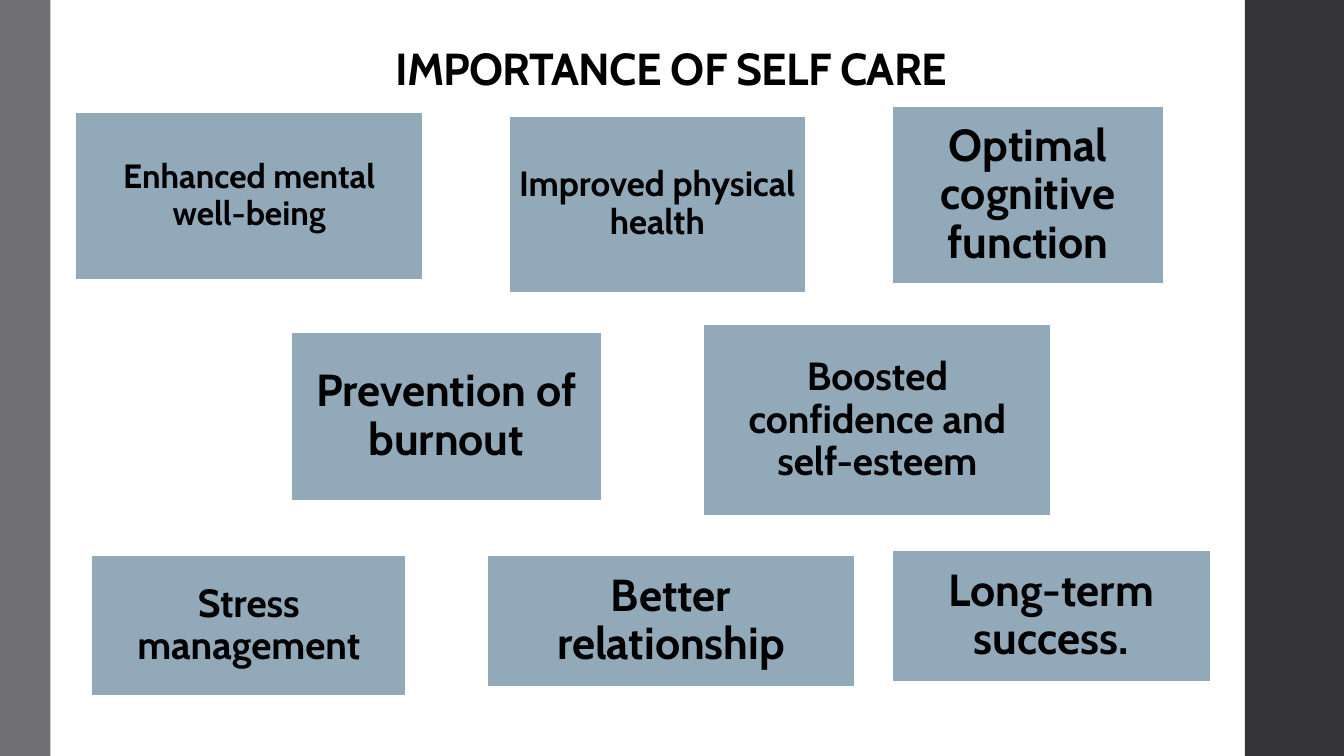
from dataclasses import dataclass

from pptx import Presentation
from pptx.dml.color import RGBColor
from pptx.enum.shapes import MSO_SHAPE as Shape
from pptx.enum.text import MSO_ANCHOR as Anchor, MSO_AUTO_SIZE as AutoSize, PP_ALIGN as Align
from pptx.util import Cm, Pt

PAGE_WIDTH, PAGE_HEIGHT = 33.87, 19.05


@dataclass(frozen=True)
class Theme:
    font: str = "Cabin"
    ink: str = "000000"
    paper: str = "FFFFFF"
    tile: str = "92A9B9"
    left_band: str = "6F6F74"
    right_band: str = "353537"
    small: float = 24
    medium: float = 25
    large: float = 28
    huge: float = 32
    outline: float = 1.1


class Page:
    def __init__(self, deck, theme):
        self.theme = theme
        self.slide = deck.slides.add_slide(deck.slide_layouts[5])
        background = self.slide.background.fill
        background.solid()
        background.fore_color.rgb = RGBColor.from_string(theme.paper)

    def set_text(self, frame, text, size, anchor, line_spacing):
        frame.word_wrap = True
        frame.auto_size = AutoSize.NONE
        frame.vertical_anchor = anchor
        para = frame.paragraphs[0]
        para.text = text
        para.alignment = Align.CENTER
        para.line_spacing = line_spacing
        font = para.font
        font.name, font.size, font.bold = self.theme.font, Pt(size), True
        font.color.rgb = RGBColor.from_string(self.theme.ink)
        return para

    def title(self, text, left, top, width, height):
        box = self.slide.shapes.title
        box.left, box.top, box.width, box.height = map(Cm, (left, top, width, height))
        para = self.set_text(box.text_frame, text, self.theme.huge, Anchor.BOTTOM, 0.85)
        # Letter spacing in hundredths of a point
        para.runs[0].font._element.set("spc", "-50")

    def rectangle(self, left, top, width, height, color):
        box = self.slide.shapes.add_shape(
            Shape.RECTANGLE, *map(Cm, (left, top, width, height)))
        box.shadow.inherit = False
        box.fill.solid()
        box.fill.fore_color.rgb = RGBColor.from_string(color)
        box.line.fill.background()
        return box

    def tile(self, text, size, inset, *place):
        box = self.rectangle(*place, self.theme.tile)
        box.line.color.rgb = RGBColor.from_string(self.theme.paper)
        box.line.width = Pt(self.theme.outline)
        frame = box.text_frame
        frame.margin_left = frame.margin_right = Cm(inset)
        frame.margin_top = frame.margin_bottom = Cm(inset)
        self.set_text(frame, text, size, Anchor.MIDDLE, 0.9)


def main():
    deck = Presentation()
    deck.slide_width, deck.slide_height = Cm(PAGE_WIDTH), Cm(PAGE_HEIGHT)
    theme = Theme()
    page = Page(deck, theme)

    page.rectangle(31.37, 0, PAGE_WIDTH - 31.37, PAGE_HEIGHT, theme.right_band)
    page.rectangle(0, 0, 1.27, PAGE_HEIGHT, theme.left_band)
    page.title("IMPORTANCE OF SELF CARE", 2.31, 0.69, 29.21, 1.83)

    # Text, type size, inset, left, top, width, height
    benefits = [
        ("Enhanced mental well-being", theme.small, 0.25, 1.9, 2.82, 8.76, 4.24),
        ("Improved physical health", theme.medium, 0.25, 12.83, 2.92, 7.47, 4.47),
        ("Optimal cognitive function", theme.huge, 0.36, 22.48, 2.69, 6.86, 4.47),
        ("Prevention of burnout", theme.huge, 0.36, 7.34, 8.38, 7.82, 4.24),
        ("Boosted confidence and self-esteem", theme.large, 0.36, 17.73, 8.18, 8.76, 4.83),
        ("Stress management", theme.large, 0.36, 2.31, 14, 7.92, 3.53),
        ("Better relationship", theme.huge, 0.69, 12.29, 14, 9.25, 3.3),
        ("Long-term success.", theme.huge, 0.69, 22.48, 13.87, 8.03, 3.3),
    ]
    for benefit in benefits:
        page.tile(*benefit)

    deck.save("out.pptx")


if __name__ == "__main__":
    main()
